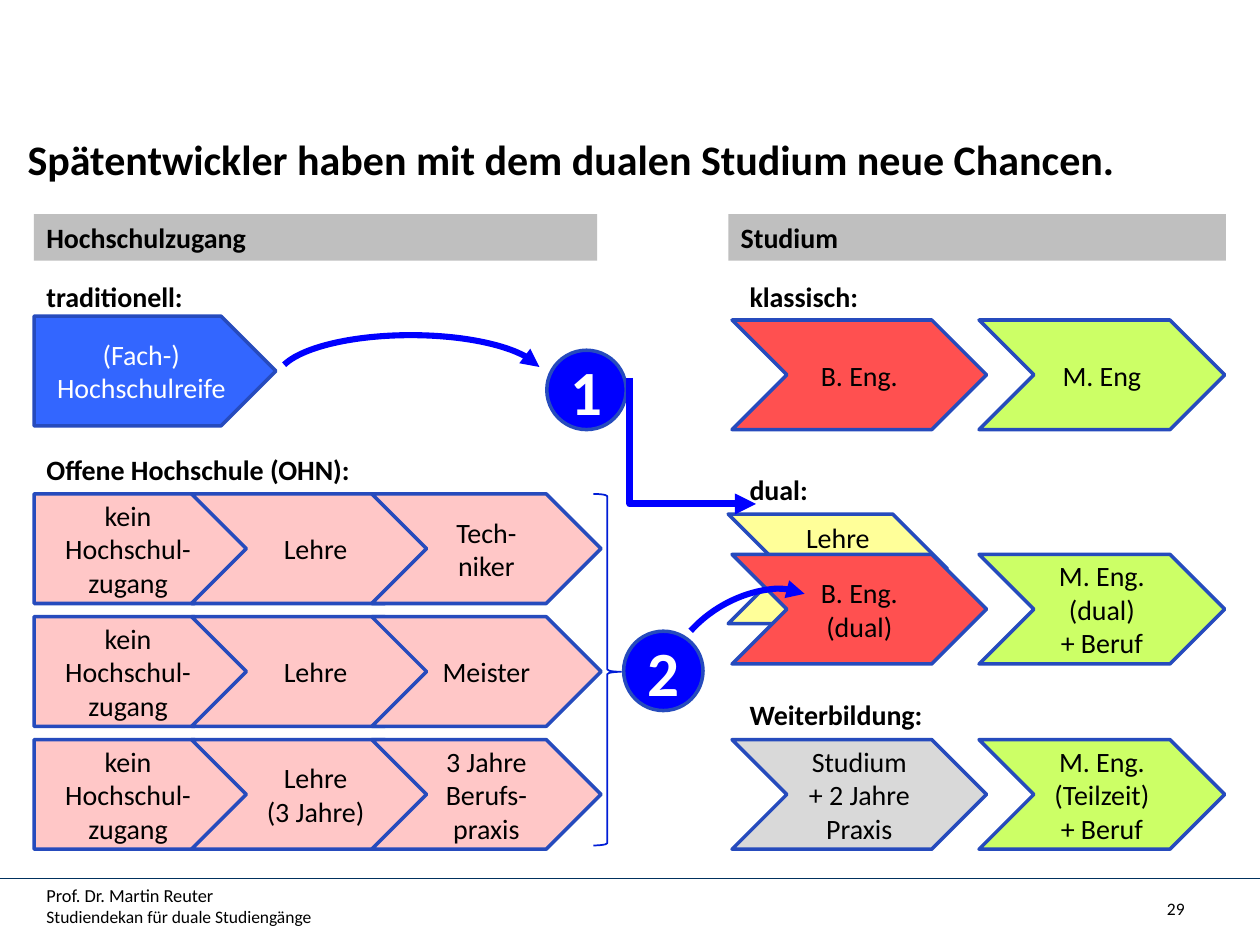
from lxml.etree import SubElement
from pptx import Presentation
from pptx.dml.color import RGBColor
from pptx.enum.shapes import MSO_CONNECTOR, MSO_SHAPE
from pptx.enum.text import MSO_ANCHOR, PP_ALIGN
from pptx.oxml.ns import qn
from pptx.util import Inches, Pt

FONT = "Calibri"
BLACK, WHITE, BLUE, OUTLINE = "000000", "FFFFFF", "0000FF", "264BBD"
PINK, RED, GREEN, YELLOW = "FFC7C7", "FF5050", "CCFF66", "FFFF99"
GRAY, BAR = "D9D9D9", "BFBFBF"
STEP_H = 0.87


def color(value):
    return RGBColor.from_string(value)


def set_text(sp, text, size=16, ink=BLACK, bold=False, align=PP_ALIGN.LEFT,
             anchor=MSO_ANCHOR.TOP):
    """Fill a shape with one paragraph; each newline becomes a line break."""
    tf = sp.text_frame
    tf.word_wrap = True
    tf.vertical_anchor = anchor
    p = tf.paragraphs[0]
    p.text = text.replace("\n", "\v")
    p.alignment = align
    for r in p.runs:
        r.font.name, r.font.size, r.font.bold = FONT, Pt(size), bold
        r.font.color.rgb = color(ink)
    return p


def add_label(s, left, top, width, text, height=0.37, bold=True, **style):
    sp = s.shapes.add_textbox(Inches(left), Inches(top), Inches(width), Inches(height))
    return set_text(sp, text, bold=bold, **style)


def add_shape(s, kind, left, top, width, height, fill=None, line=None, weight=2):
    sp = s.shapes.add_shape(kind, Inches(left), Inches(top), Inches(width), Inches(height))
    style_shape(sp, fill, line, weight)
    return sp


def style_shape(sp, fill, line, weight):
    sp.shadow.inherit = False
    if fill:
        sp.fill.solid()
        sp.fill.fore_color.rgb = color(fill)
    else:
        sp.fill.background()
    if line:
        sp.line.color.rgb = color(line)
        sp.line.width = Pt(weight)
    else:
        sp.line.fill.background()


def add_arrowhead(sp):
    SubElement(sp.line._get_or_add_ln(), qn("a:tailEnd"), type="triangle")


def add_header(s, left, top, width, text):
    sp = add_shape(s, MSO_SHAPE.RECTANGLE, left, top, width, 0.37, BAR)
    set_text(sp, text, bold=True)


def add_step(s, left, top, width, text, fill, kind=MSO_SHAPE.CHEVRON, ink=BLACK,
             anchor=MSO_ANCHOR.MIDDLE):
    sp = add_shape(s, kind, left, top, width, STEP_H, fill, OUTLINE)
    set_text(sp, text, ink=ink, align=PP_ALIGN.CENTER, anchor=anchor)


def add_access(s, left, top):
    """Left column: the ways into higher education."""
    add_header(s, left, top, 4.47, "Hochschulzugang")
    add_label(s, left, top + 0.47, 3.45, "traditionell:")
    add_step(s, left, top + 0.81, 1.92, "(Fach-) Hochschulreife", "3366FF",
             MSO_SHAPE.PENTAGON, WHITE)
    add_label(s, left, top + 1.84, 4.55, "Offene Hochschule (OHN):")
    rows = [("Lehre", "Tech-niker"),
            ("Lehre", "Meister"),
            ("Lehre\n(3 Jahre)", "3 Jahre\nBerufs-praxis")]
    for i, (training, practice) in enumerate(rows):
        y = top + 2.22 + i * 0.975
        add_step(s, left, y, 1.71, "kein Hochschul-zugang", PINK, MSO_SHAPE.PENTAGON)
        add_step(s, left + 1.25, y, 1.97, training, PINK)
        add_step(s, left + 2.68, y, 1.82, practice, PINK)
    brace = add_shape(s, MSO_SHAPE.RIGHT_BRACE, left + 4.44, top + 2.22, 0.22, 2.79,
                      line="001DD6", weight=1)
    brace.adjustments[0], brace.adjustments[1] = 0.083, 0.506


def add_study(s, left, top):
    """Right column: the study programmes."""
    add_header(s, left, top, 3.95, "Studium")
    add_step(s, left, top + 2.38, 1.74, "Lehre", YELLOW, anchor=MSO_ANCHOR.TOP)
    programmes = [
        (0.47, 0.84, "klassisch:", "B. Eng.", RED, "M. Eng"),
        (2.0, 2.7, "dual:", "B. Eng.\n(dual)", RED, "M. Eng.\n(dual)\n+ Beruf"),
        (3.79, 4.17, "Weiterbildung:", "Studium\n+ 2 Jahre Praxis", GRAY,
         "M. Eng. (Teilzeit)\n+ Beruf"),
    ]
    for label_y, step_y, label, first, fill, master in programmes:
        add_label(s, left + 0.07, top + label_y, 3.45, label)
        add_step(s, left + 0.03, top + step_y, 2.02, first, fill)
        add_step(s, left + 1.99, top + step_y, 1.95, master, GREEN)


def add_number(s, left, top, text):
    sp = add_shape(s, MSO_SHAPE.OVAL, left, top, 0.63, 0.63, BLUE, OUTLINE)
    set_text(sp, text, 36, WHITE, True, PP_ALIGN.CENTER, MSO_ANCHOR.MIDDLE)


def add_arc(s, left, top, width, height, start, end, rotation=0):
    sp = add_shape(s, MSO_SHAPE.ARC, left, top, width, height, line=BLUE, weight=3.5)
    sp.adjustments[0], sp.adjustments[1] = start, end
    sp.rotation = rotation
    add_arrowhead(sp)


def bezier(a, b, c, d, steps=12):
    """Points on a cubic curve, without its start."""
    for i in range(1, steps + 1):
        t = i / steps
        u = 1 - t
        yield tuple(u**3 * p + 3 * u * u * t * q + 3 * u * t * t * r + t**3 * v
                    for p, q, r, v in zip(a, b, c, d))


def add_curve(s, start, *curves):
    builder = s.shapes.build_freeform(*start, scale=Inches(1))
    for b, c, d in curves:
        builder.add_line_segments(list(bezier(start, b, c, d)), close=False)
        start = d
    sp = builder.convert_to_shape()
    style_shape(sp, None, BLUE, 4)
    add_arrowhead(sp)


def add_transitions(s, left, top):
    """Numbered routes from the left column to the right one."""
    add_number(s, left + 2.14, top + 0.12, "1")
    add_number(s, left + 2.75, top + 2.35, "2")
    add_arc(s, left, top, 2.12, 0.69, 111.75, 212.9)
    add_arc(s, left + 3.07, top + 2.09, 1.34, 0.83, 137.43, 206.76, 330)
    points = [(2.78, 0.73), (3.09, 1.01), (3.4, 1.29), (3.6, 1.44),
              (3.8, 1.58), (3.92, 1.57), (3.99, 1.6)]
    points = [(left + x, top + y) for x, y in points]
    add_curve(s, points[0], points[1:4], points[4:7])


def add_footer(s, top, width):
    line = s.shapes.add_connector(MSO_CONNECTOR.STRAIGHT, 0, Inches(top),
                                  Inches(width), Inches(top))
    line.line.color.rgb = color("00305D")
    line.line.width = Pt(0.75)
    SubElement(line._element.spPr, qn("a:effectLst"))
    p = add_label(s, 0.27, top, 6.69,
                  "Prof. Dr. Martin Reuter\nStudiendekan für duale Studiengänge",
                  height=0.39, bold=False, size=10)
    p.runs[0].font.size = Pt(10.5)
    add_label(s, width - 2.33, top + 0.11, 1.83, "29", height=0.25, bold=False,
              size=10, align=PP_ALIGN.RIGHT)


def main():
    prs = Presentation()
    prs.slide_width, prs.slide_height = Inches(10), Inches(7.5)
    s = prs.slides.add_slide(prs.slide_layouts[6])
    add_footer(s, 6.97, 10)
    title = add_label(s, 0.12, 0.93, 9.88,
                      "Spätentwickler haben mit dem dualen Studium neue Chancen.",
                      height=0.59, size=24)
    title.line_spacing = 1.2
    add_access(s, 0.27, 1.7)
    add_study(s, 5.78, 1.7)
    add_transitions(s, 2.2, 2.66)
    prs.save("out.pptx")


if __name__ == "__main__":
    main()
